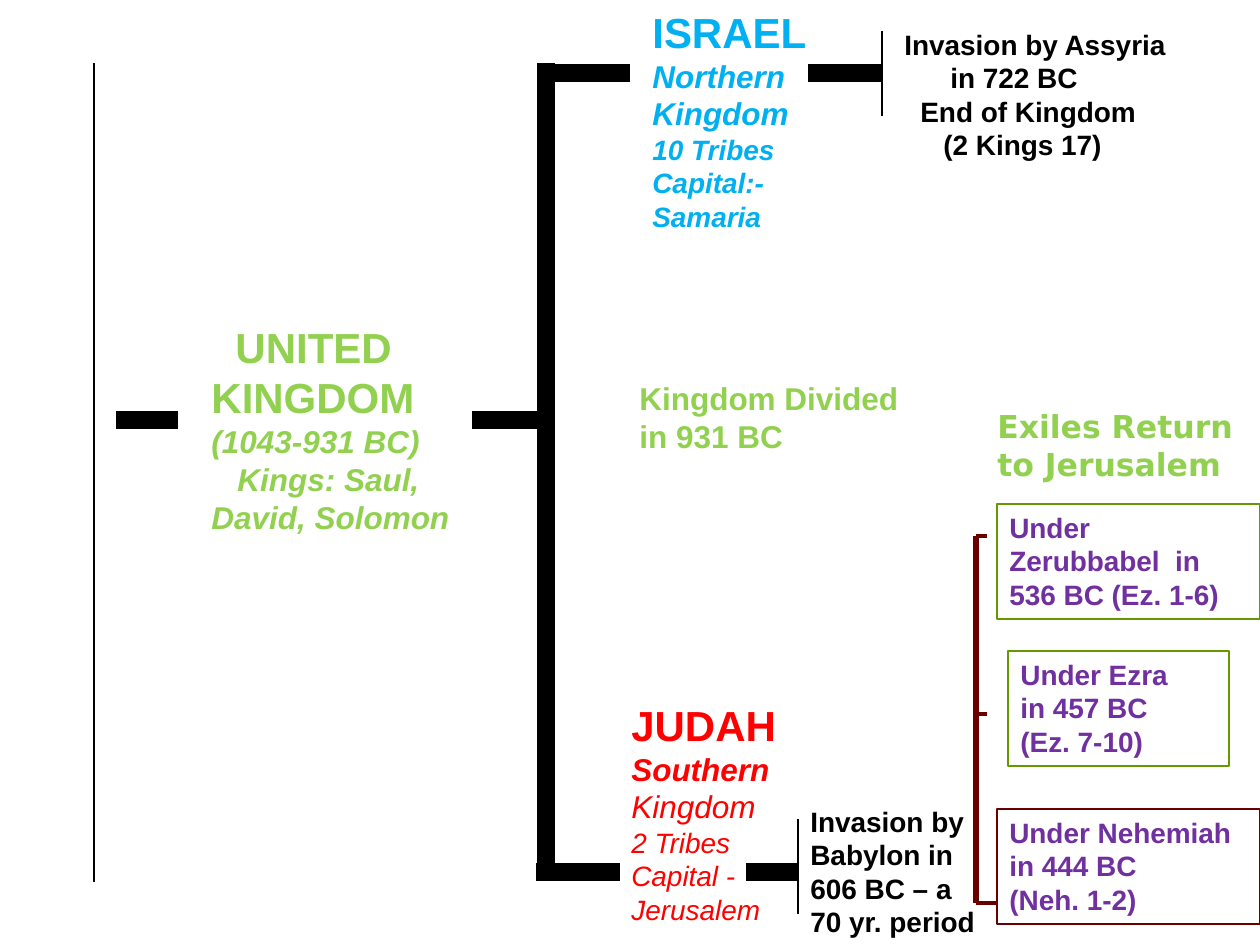
from lxml import etree
from pptx import Presentation
from pptx.dml.color import RGBColor
from pptx.enum.shapes import MSO_CONNECTOR, MSO_SHAPE
from pptx.enum.text import MSO_ANCHOR, MSO_AUTO_SIZE, PP_ALIGN
from pptx.oxml.ns import qn
from pptx.util import Emu, Pt

STRAIGHT = MSO_CONNECTOR.STRAIGHT
RECT = MSO_SHAPE.RECTANGLE
TOP = MSO_ANCHOR.TOP
GROW = MSO_AUTO_SIZE.SHAPE_TO_FIT_TEXT
LEFT = PP_ALIGN.LEFT

SCALE = 914400 / 126  # EMU in one px
COLORS = {
    "black": "000000",
    "lime": "92D050",
    "red": "FF0000",
    "blue": "00B0F0",
    "purple": "7030A0",
    "olive": "669900",
    "maroon": "680000",
}


def px(num):
    return Emu(round(num * SCALE))


def rgb(name):
    return RGBColor.from_string(COLORS[name])


def add_line(slide, x1, y1, x2, y2, color="black", width=10):
    line = slide.shapes.add_connector(STRAIGHT, px(x1), px(y1), px(x2), px(y2))
    line.line.color.rgb = rgb(color)
    line.line.width = Pt(width)
    etree.SubElement(line._element.spPr, qn("a:effectLst"))


def put_text(shape, rows, color, size=16, font="Arial", wrap=True):
    """Write one paragraph per row: a text, or a text with its own format."""
    frame = shape.text_frame
    frame.word_wrap = wrap
    frame.auto_size = GROW
    frame.vertical_anchor = TOP
    for num, row in enumerate(rows):
        text, form = (row, {}) if isinstance(row, str) else row
        para = frame.add_paragraph() if num else frame.paragraphs[0]
        para.alignment = LEFT
        if "indent" in form:
            para._p.get_or_add_pPr().set("indent", str(px(form["indent"])))
        run = para.add_run()
        run.text = text
        run.font.name = font
        run.font.size = Pt(form.get("size", size))
        run.font.bold = form.get("bold", True)
        run.font.italic = form.get("italic", False)
        run.font.color.rgb = rgb(color)


def add_label(slide, x, y, w, h, rows, color, **form):
    box = slide.shapes.add_textbox(px(x), px(y), px(w), px(h))
    put_text(box, rows, color, **form)


def add_box(slide, x, y, w, h, rows, edge):
    box = slide.shapes.add_shape(RECT, px(x), px(y), px(w), px(h))
    box.shadow.inherit = False
    box.fill.background()
    box.line.color.rgb = rgb(edge)
    box.line.width = Pt(0.75)
    put_text(box, rows, "purple")


def add_tree(slide):
    # Thick trunk and branches
    for ends in [
        (116, 420, 178, 420), (472, 420, 546, 420),
        (546, 441, 546, 63), (546, 420, 546, 872),
        (546, 73, 630, 73), (536, 872, 620, 872),
        (746, 872, 798, 872), (808, 73, 882, 73),
    ]:
        add_line(slide, *ends)
    # Thin upright bars
    for x, top, end in [(94, 63, 882), (882, 31, 116), (798, 819, 914)]:
        add_line(slide, x, top, x, end, width=0.75)


def add_realms(slide):
    head = {"size": 24}
    mid = {"size": 18, "italic": True}
    low = {"italic": True}
    thin = {"italic": True, "bold": False}

    add_label(slide, 199, 315, 273, 227, [
        ("UNITED", head | {"indent": 24}),
        ("KINGDOM", head),
        ("(1043-931 BC)", mid),
        ("Kings: Saul, David, Solomon", mid | {"indent": 26}),
    ], "lime")
    add_label(slide, 640, 0, 199, 239, [
        ("ISRAEL", head), ("Northern", mid), ("Kingdom", mid),
        ("10 Tribes", low), ("Capital:- Samaria", low),
    ], "blue")
    add_label(slide, 619, 693, 179, 239, [
        ("JUDAH", head), ("Southern", mid), ("Kingdom", mid | thin),
        ("2 Tribes", thin), ("Capital -", thin), ("Jerusalem", thin),
    ], "red")


def add_events(slide):
    add_label(slide, 892, 21, 315, 149, [
        "Invasion by Assyria",
        ("in 722 BC", {"indent": 46}),
        ("End of Kingdom", {"indent": 16}),
        ("(2 Kings 17)", {"indent": 39}),
    ], "black")
    add_label(slide, 798, 798, 199, 147, [
        "Invasion by", "Babylon in", "606 BC – a 70 yr. period",
    ], "black")
    add_label(slide, 627, 373, 285, 88, ["Kingdom Divided", "in 931 BC"],
              "lime", size=18, wrap=False)


def add_exiles(slide):
    add_label(slide, 985, 401, 275, 88, ["Exiles Return", "to Jerusalem"],
              "lime", size=18, font="DejaVu Sans")
    # Bracket
    add_line(slide, 976, 536, 976, 903, "maroon", 3)
    for y, end in [(536, 987), (714, 987), (903, 998)]:
        add_line(slide, 976, y, end, y, "maroon", 2.25)
    # Three returns
    for x, y, w, rows, edge in [
        (997, 504, 263, ["Under Zerubbabel  in 536 BC (Ez. 1-6)"], "olive"),
        (1008, 651, 221, ["Under Ezra", "in 457 BC", "(Ez. 7-10)"], "olive"),
        (997, 809, 263, ["Under Nehemiah", "in 444 BC", "(Neh. 1-2)"], "maroon"),
    ]:
        add_box(slide, x, y, w, 115, rows, edge)


def main():
    deck = Presentation()
    deck.slide_width = px(1260)
    deck.slide_height = px(945)
    slide = deck.slides.add_slide(deck.slide_layouts[6])
    add_tree(slide)
    add_realms(slide)
    add_events(slide)
    add_exiles(slide)
    deck.save("out.pptx")


if __name__ == "__main__":
    main()
